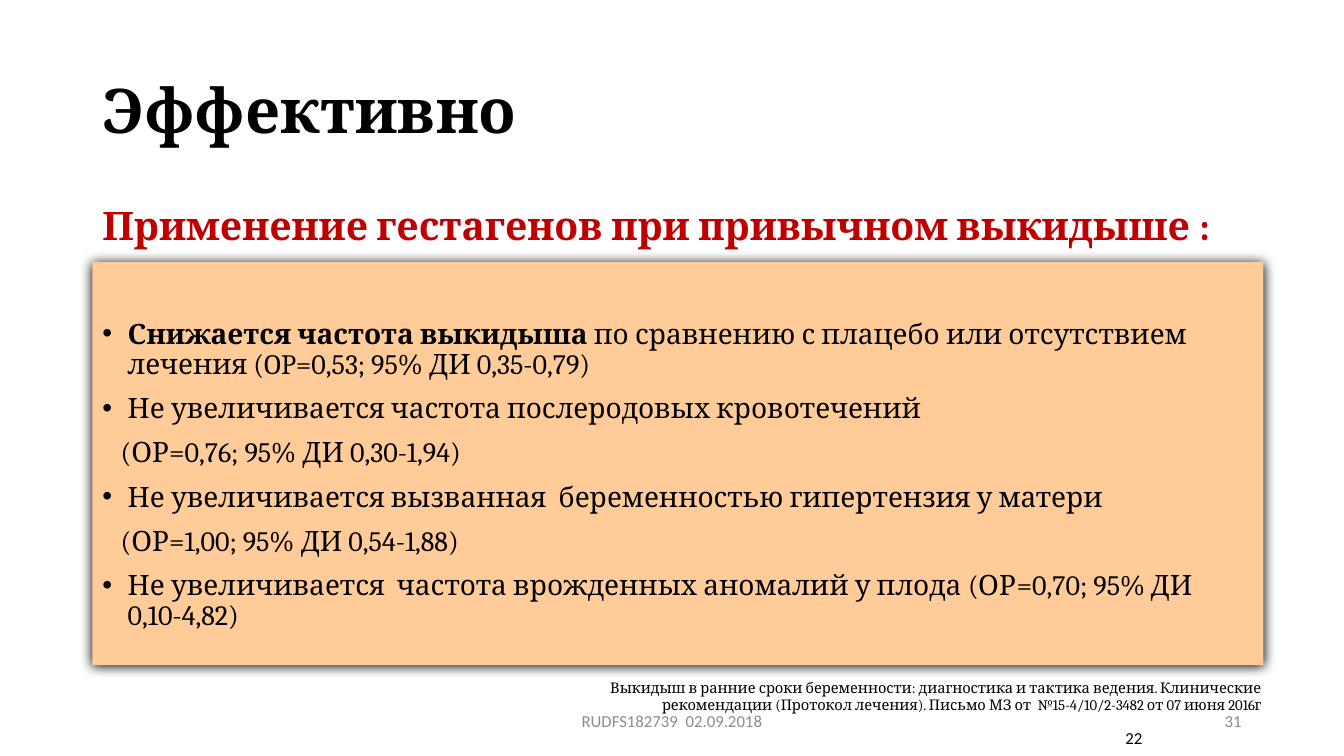
from dataclasses import dataclass

from lxml import etree
from pptx import Presentation
from pptx.dml.color import RGBColor
from pptx.enum.shapes import MSO_SHAPE
from pptx.enum.text import MSO_ANCHOR, PP_ALIGN
from pptx.oxml.ns import qn
from pptx.util import Cm, Pt

RECTANGLE = MSO_SHAPE.RECTANGLE
TOP, MIDDLE = MSO_ANCHOR.TOP, MSO_ANCHOR.MIDDLE
LEFT, CENTER, RIGHT = PP_ALIGN.LEFT, PP_ALIGN.CENTER, PP_ALIGN.RIGHT
BLANK_LAYOUT = 6


@dataclass(frozen=True)
class Theme:
    serif: str = "Cambria"
    sans: str = "Calibri"
    black: str = "000000"
    white: str = "FFFFFF"
    red: str = "C00000"
    gray: str = "8C8C8C"
    peach: str = "FFCC99"
    title_size: float = 44
    heading_size: float = 28
    body_size: float = 20
    footer_size: float = 12
    source_size: float = 10.5


THEME = Theme()

# Bold lead, text, bulleted
FINDINGS = [
    ("Снижается частота выкидыша ",
     "по сравнению с плацебо или отсутствием лечения (OP=0,53; 95% ДИ 0,35-0,79)", True),
    ("", "Не увеличивается частота послеродовых кровотечений", True),
    ("", "(ОР=0,76; 95% ДИ 0,30-1,94)", False),
    ("", "Не увеличивается вызванная  беременностью гипертензия у матери", True),
    ("", "(ОР=1,00; 95% ДИ 0,54-1,88)", False),
    ("", "Не увеличивается  частота врожденных аномалий у плода "
         "(ОР=0,70; 95% ДИ 0,10-4,82)", True),
]
SOURCE = ("Выкидыш в ранние сроки беременности: диагностика и тактика ведения. "
          "Клинические рекомендации (Протокол лечения). Письмо МЗ от\u00a0 "
          "№15-4/10/2-3482 от 07 июня 2016г")


def style(paragraph, size, color=THEME.black, family=THEME.serif, bold=False, align=LEFT):
    paragraph.alignment = align
    font = paragraph.font
    font.name, font.size, font.bold = family, Pt(size), bold
    font.color.rgb = RGBColor.from_string(color)


def add_panel(slide, left, top, width, height, color):
    panel = slide.shapes.add_shape(RECTANGLE, Cm(left), Cm(top), Cm(width), Cm(height))
    panel.shadow.inherit = False
    panel.fill.solid()
    panel.fill.fore_color.rgb = RGBColor.from_string(color)
    panel.line.fill.background()
    return panel


def add_soft_shadow(panel):
    effects = panel._element.spPr.find(qn("a:effectLst"))
    shadow = etree.SubElement(effects, qn("a:outerShdw"), blurRad=str(Pt(8.5)),
                              dist=str(Pt(1)), dir="5400000", rotWithShape="0")
    etree.SubElement(shadow, qn("a:srgbClr"), val=THEME.black)


def add_text_frame(slide, left, top, width, height, anchor=MIDDLE):
    frame = slide.shapes.add_textbox(Cm(left), Cm(top), Cm(width), Cm(height)).text_frame
    frame.word_wrap = True
    frame.vertical_anchor = anchor
    return frame


def add_line(slide, left, top, width, height, text, size, anchor=MIDDLE, **look):
    """Add a text box with one paragraph and return the paragraph."""
    paragraph = add_text_frame(slide, left, top, width, height, anchor).paragraphs[0]
    paragraph.text = text
    style(paragraph, size, **look)
    return paragraph


def add_finding(frame, lead, text, bulleted, gap):
    paragraph = frame.add_paragraph()
    if lead:
        paragraph.add_run().text = lead
        paragraph.runs[0].font.bold = True
    paragraph.add_run().text = text
    paragraph.line_spacing = 0.9
    paragraph.space_before = Pt(gap)
    properties = paragraph._p.get_or_add_pPr()
    if bulleted:
        properties.set("marL", str(Cm(0.64)))
        properties.set("indent", str(-Cm(0.64)))
        etree.SubElement(properties, qn("a:buFont"), typeface="Arial")
        etree.SubElement(properties, qn("a:buChar"), char="•")
    else:
        properties.set("marL", str(Cm(0.46)))
    style(paragraph, THEME.body_size)


def add_findings(slide):
    frame = add_text_frame(slide, 2.33, 5.07, 29.21, 12.09, TOP)
    heading = frame.paragraphs[0]
    heading.text = "Применение гестагенов при привычном выкидыше :"
    heading.line_spacing = 0.9
    style(heading, THEME.heading_size, THEME.red, bold=True)
    for index, finding in enumerate(FINDINGS):
        add_finding(frame, *finding, gap=10 if index else 51)


def main():
    deck = Presentation()
    deck.slide_width, deck.slide_height = Cm(33.87), Cm(19.05)
    slide = deck.slides.add_slide(deck.slide_layouts[BLANK_LAYOUT])

    add_soft_shadow(add_panel(slide, 2.33, 6.6, 29.51, 10.16, THEME.peach))
    title = add_line(slide, 2.33, 1.01, 29.21, 3.68, "Эффективно",
                     THEME.title_size, bold=True)
    title.line_spacing = 0.9
    add_findings(slide)
    add_line(slide, 13.06, 16.97, 19, 1.14, SOURCE, THEME.source_size,
             anchor=TOP, align=RIGHT)

    page = add_panel(slide, 27.94, 18.14, 1.27, 0.91, THEME.white)
    page.text_frame.vertical_anchor = MIDDLE
    page_number = page.text_frame.paragraphs[0]
    page_number.text = "22"
    style(page_number, THEME.footer_size, family=THEME.sans, align=CENTER)

    footer = {"size": THEME.footer_size, "color": THEME.gray, "family": THEME.sans}
    add_line(slide, 11.22, 17.66, 11.43, 1.01, "RUDFS182739  02.09.2018",
             align=CENTER, **footer)
    add_line(slide, 23.92, 17.66, 7.62, 1.01, "31", align=RIGHT, **footer)
    deck.save("out.pptx")


if __name__ == "__main__":
    main()
